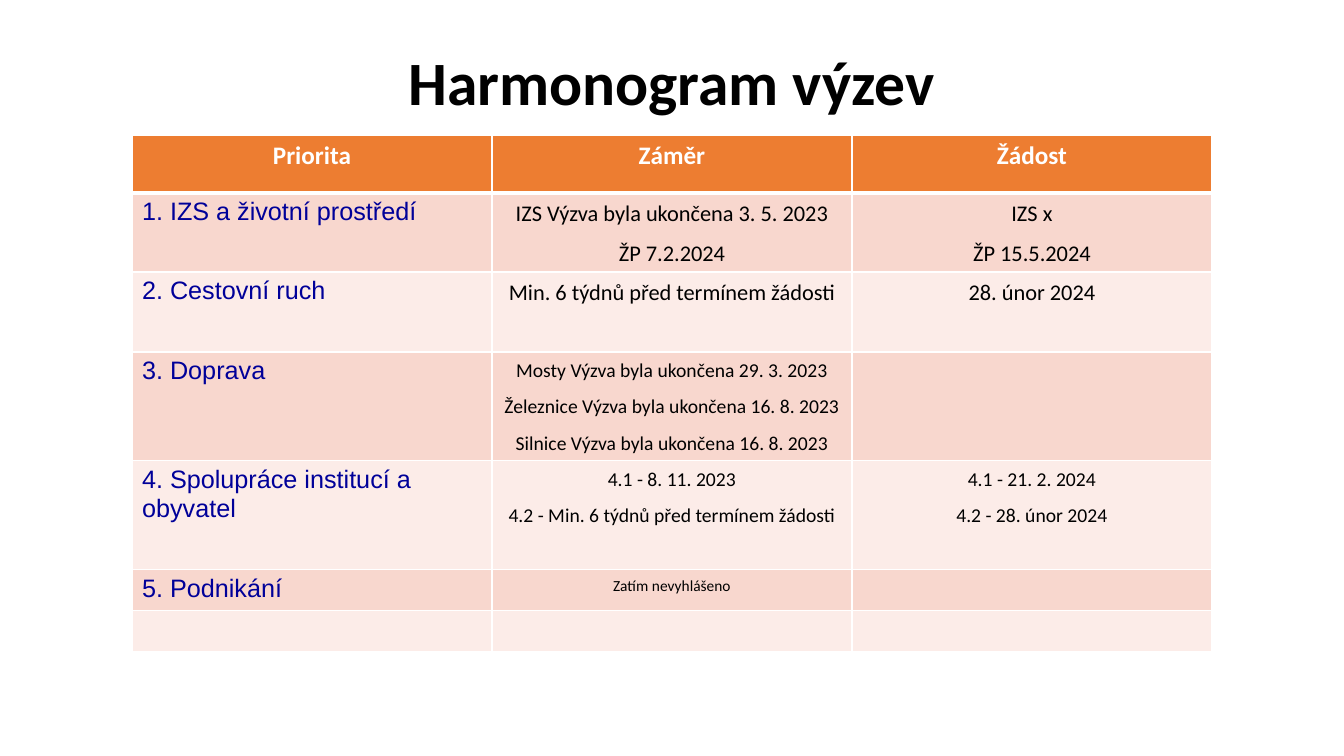
from lxml import etree
from pptx import Presentation
from pptx.dml.color import RGBColor
from pptx.enum.text import MSO_ANCHOR, PP_ALIGN
from pptx.oxml.ns import qn
from pptx.util import Pt

CENTER, LEFT = PP_ALIGN.CENTER, PP_ALIGN.LEFT
MIDDLE = MSO_ANCHOR.MIDDLE

BLACK = RGBColor(0x00, 0x00, 0x00)
WHITE = RGBColor(0xFF, 0xFF, 0xFF)
NAVY = RGBColor(0x00, 0x00, 0x99)
ORANGE = RGBColor(0xED, 0x7D, 0x31)
BANDS = (RGBColor(0xF8, 0xD7, 0xCE), RGBColor(0xFC, 0xEC, 0xE8))

HEADINGS = ["Priorita", "Záměr", "Žádost"]

# Row height, size of the dates, priority, intent lines, application lines
CALLS = [
    (79, 16, "1. IZS a životní prostředí",
     ["IZS Výzva byla ukončena 3. 5. 2023", "ŽP 7.2.2024"],
     ["IZS x", "ŽP 15.5.2024"]),
    (80, 16, "2. Cestovní ruch",
     ["Min. 6 týdnů před termínem žádosti"], ["28. únor 2024"]),
    (109, 14, "3. Doprava",
     ["Mosty Výzva byla ukončena 29. 3. 2023",
      "Železnice Výzva byla ukončena 16. 8. 2023",
      "Silnice Výzva byla ukončena 16. 8. 2023"], [""]),
    (109, 14, "4. Spolupráce institucí a obyvatel",
     ["4.1 - 8. 11. 2023", "4.2 - Min. 6 týdnů před termínem žádosti"],
     ["4.1 - 21. 2. 2024", "4.2 - 28. únor 2024"]),
    (41, 11, "5. Podnikání", ["Zatím nevyhlášeno"], [""]),
    (41, 11, "", [""], [""]),
]


def px(length):
    return round(length * 914400 / 100.8)


class SlideBuilder:
    def __init__(self, deck):
        self.page = deck.slides.add_slide(deck.slide_layouts[6])

    def fill_text(self, frame, lines, size, color, font="Calibri", bold=False,
                  align=CENTER, spacing=None, after=0):
        for index, line in enumerate(lines):
            para = frame.paragraphs[0] if index == 0 else frame.add_paragraph()
            para.text = line
            para.alignment = align
            para.line_spacing = spacing
            para.space_after = Pt(after)
            para.font.name = font
            para.font.size = Pt(size)
            para.font.bold = bold
            para.font.color.rgb = color

    def title(self, text, left, top, width, height):
        box = self.page.shapes.add_textbox(px(left), px(top), px(width), px(height))
        frame = box.text_frame
        frame.word_wrap = True
        frame.vertical_anchor = MIDDLE
        self.fill_text(frame, [text], 44, BLACK, bold=True, spacing=0.9)

    def table(self, left, top, column_width, heights):
        columns = len(HEADINGS)
        table = self.page.shapes.add_table(
            len(heights), columns, px(left), px(top),
            px(column_width * columns), px(sum(heights))).table
        table.horz_banding = False
        for column in table.columns:
            column.width = px(column_width)
        for row, height in zip(table.rows, heights):
            row.height = px(height)
        return table

    def cell(self, cell, fill, top_line=1, bottom_line=1):
        cell.fill.solid()
        cell.fill.fore_color.rgb = fill
        properties = cell._tc.get_or_add_tcPr()
        lines = (("L", 1), ("R", 1), ("T", top_line), ("B", bottom_line))
        for position, (side, weight) in enumerate(lines):
            line = etree.Element(qn(f"a:ln{side}"), w=str(Pt(weight)))
            solid = etree.SubElement(line, qn("a:solidFill"))
            etree.SubElement(solid, qn("a:srgbClr"), val=str(WHITE))
            properties.insert(position, line)
        return cell.text_frame


def main():
    deck = Presentation()
    deck.slide_width, deck.slide_height = px(1344), px(756)
    slide = SlideBuilder(deck)

    # Title
    slide.title("Harmonogram výzev", 92, 13, 1160, 146)

    # Table header
    table = slide.table(132, 135, 360, [58] + [call[0] for call in CALLS])
    for column, heading in enumerate(HEADINGS):
        frame = slide.cell(table.cell(0, column), ORANGE, bottom_line=3)
        slide.fill_text(frame, [heading], 18, WHITE, bold=True)

    # Calls by priority
    for row, (_, size, priority, intent, application) in enumerate(CALLS, 1):
        fill = BANDS[(row - 1) % 2]
        top_line = 3 if row == 1 else 1
        frame = slide.cell(table.cell(row, 0), fill, top_line)
        slide.fill_text(frame, [priority], 18, NAVY, font="Arial", align=LEFT)
        for column, lines in enumerate((intent, application), 1):
            frame = slide.cell(table.cell(row, column), fill, top_line)
            slide.fill_text(frame, lines, size, BLACK, spacing=1.07, after=8)

    deck.save("out.pptx")


if __name__ == "__main__":
    main()
